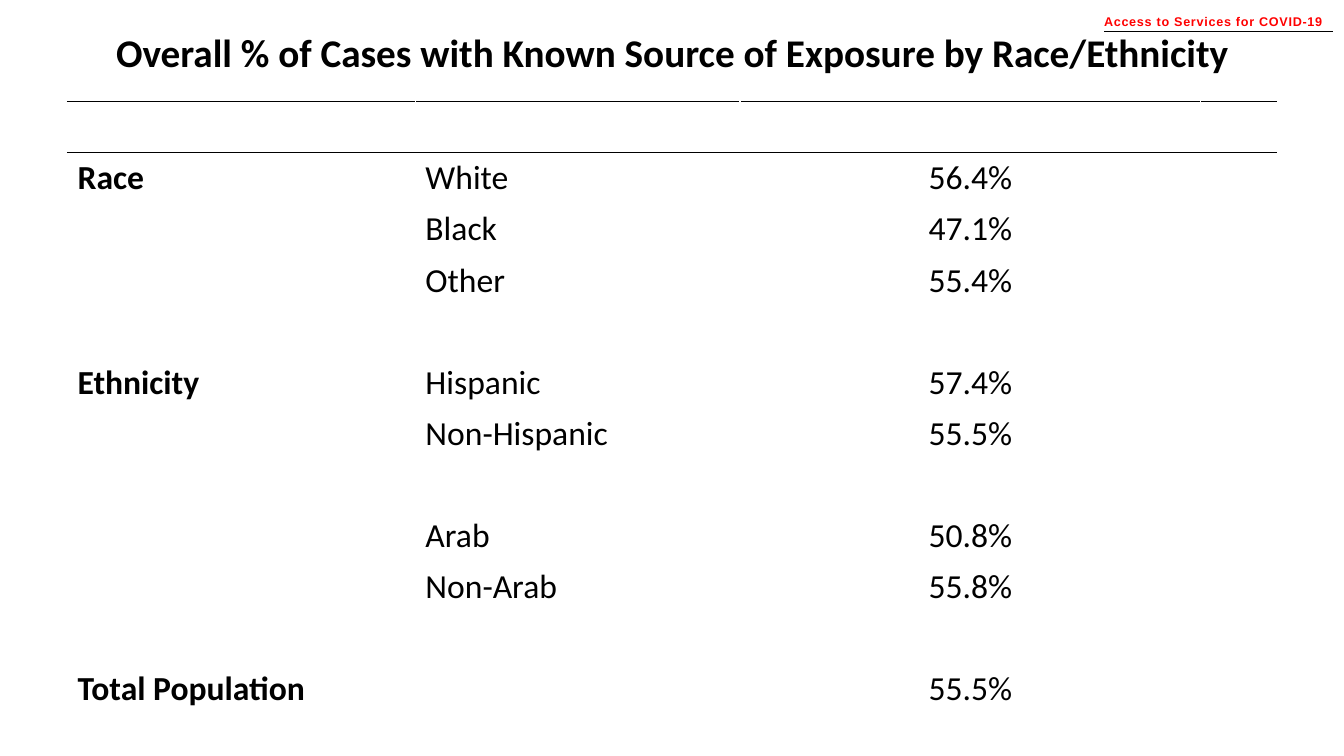
from pptx import Presentation
from pptx.dml.color import RGBColor
from pptx.enum.text import MSO_ANCHOR, PP_ALIGN
from pptx.oxml import parse_xml
from pptx.oxml.ns import nsdecls
from pptx.util import Inches, Pt

TITLE = "Overall % of Cases with Known Source of Exposure by Race/Ethnicity"
TAG = "Access to Services for COVID-19"
ROWS = [
    ("Race", "White", "56.4%"),
    ("", "Black", "47.1%"),
    ("", "Other", "55.4%"),
    ("", "", ""),
    ("Ethnicity", "Hispanic", "57.4%"),
    ("", "Non-Hispanic", "55.5%"),
    ("", "", ""),
    ("", "Arab", "50.8%"),
    ("", "Non-Arab", "55.8%"),
    ("", "", ""),
    ("Total Population", "", "55.5%"),
    ("", "", ""),
]
WIDTHS = [3.45, 3.22, 4.57, 0.75]
HEAD, STEP, LAST = 0.76, 0.507, 0.4
HEIGHTS = [HEAD] + [STEP] * len(ROWS) + [LAST]
RULES = {0: "B", 1: "BT", 2: "T"}

BLACK = RGBColor(0, 0, 0)
RED = RGBColor(255, 0, 0)

HEADING = {"name": "Calibri", "size": Pt(28), "bold": True}
LABEL = {"name": "Calibri", "size": Pt(24), "bold": True}
BODY = {"name": "Calibri", "size": Pt(24), "bold": False}
SMALL = {"name": "Arial", "size": Pt(9), "bold": True}
STYLES = [LABEL, BODY, BODY]
ALIGNS = [PP_ALIGN.LEFT, PP_ALIGN.LEFT, PP_ALIGN.CENTER]
PLAIN = {"first_row": False, "horz_banding": False}
FRAME = {"margin_left": 0, "margin_top": 0, "margin_right": 0,
         "margin_bottom": Inches(0.02), "word_wrap": True}


def apply(item, style):
    for key, value in style.items():
        setattr(item, key, value)


def write(frame, text, style, color, align):
    para = frame.paragraphs[0]
    para.alignment = align
    run = para.add_run()
    run.text = text
    apply(run.font, style)
    run.font.color.rgb = color
    return run


def rule(cell, side):
    cell._tc.get_or_add_tcPr().insert(0, parse_xml(
        f'<a:ln{side} {nsdecls("a")} w="12700"><a:solidFill>'
        f'<a:srgbClr val="{BLACK}"/></a:solidFill></a:ln{side}>'))


def add_grid(slide):
    grid = slide.shapes.add_table(
        len(HEIGHTS), len(WIDTHS), Inches(0.67), Inches(0.25),
        Inches(sum(WIDTHS)), Inches(sum(HEIGHTS))).table
    apply(grid, PLAIN)
    for col, width in zip(grid.columns, WIDTHS):
        col.width = Inches(width)
    for row, height in zip(grid.rows, HEIGHTS):
        row.height = Inches(height)
    for r, row in enumerate(grid.rows):
        for cell in row.cells:
            cell.fill.background()
            cell.vertical_anchor = MSO_ANCHOR.TOP
            for side in RULES.get(r, ""):
                rule(cell, side)
    title = grid.cell(0, 0)
    title.merge(grid.cell(0, len(WIDTHS) - 1))
    write(title.text_frame, TITLE, HEADING, BLACK, PP_ALIGN.CENTER)
    for r, row in enumerate(ROWS, 2):
        for c, text in enumerate(row):
            if text:
                write(grid.cell(r, c).text_frame, text, STYLES[c], BLACK, ALIGNS[c])


def add_tag(slide):
    left, top, width, base = (Inches(n) for n in (10.95, 0.14, 2.27, 0.31))
    frame = slide.shapes.add_textbox(left, top, width, base - top).text_frame
    apply(frame, FRAME)
    run = write(frame, TAG, SMALL, RED, PP_ALIGN.LEFT)
    run.font._element.set("spc", "50")
    line = slide.shapes.add_connector(1, left, base, left + width, base)
    line.line.color.rgb = BLACK
    line.line.width = Pt(0.33)
    line._element.spPr.append(parse_xml(f'<a:effectLst {nsdecls("a")}/>'))


def main():
    deck = Presentation()
    deck.slide_width, deck.slide_height = Inches(13.33), Inches(7.5)
    slide = deck.slides.add_slide(deck.slide_layouts[6])
    add_grid(slide)
    add_tag(slide)
    deck.save("out.pptx")


if __name__ == "__main__":
    main()
